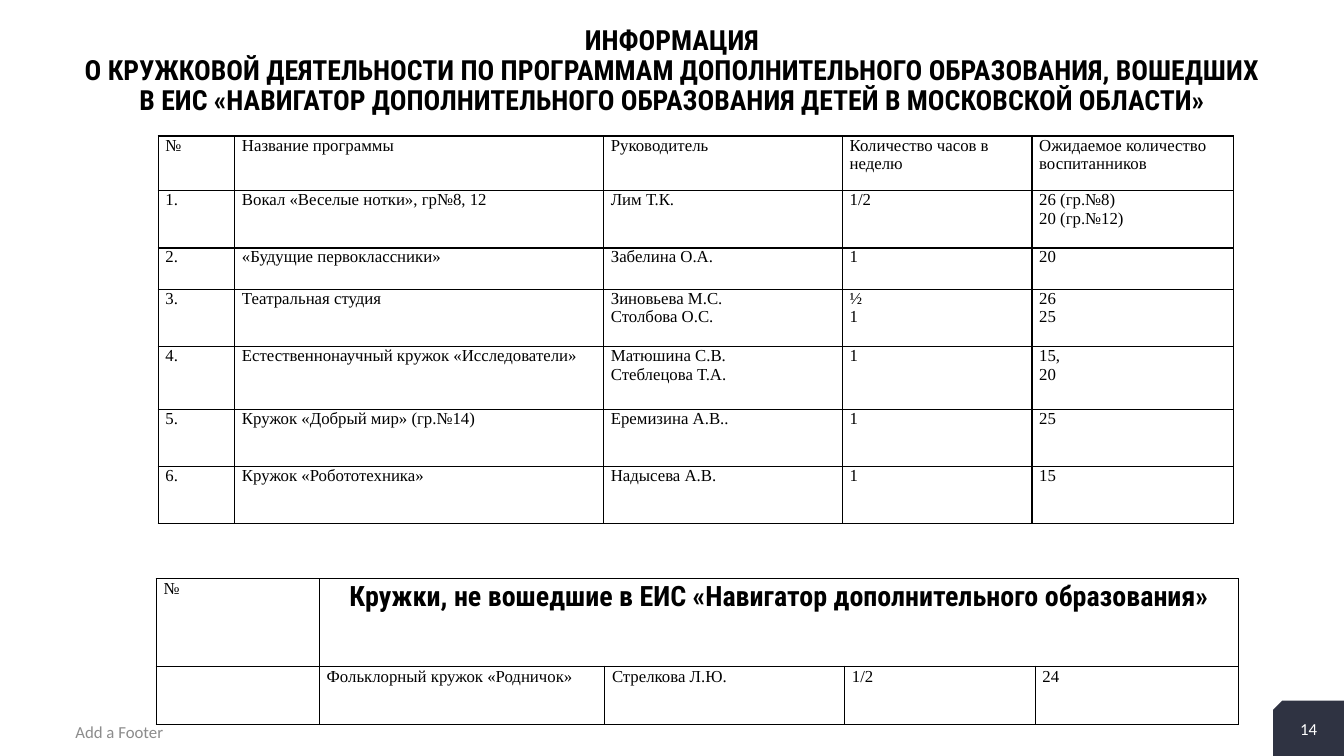
from dataclasses import dataclass

from lxml.etree import SubElement
from pptx import Presentation
from pptx.dml.color import RGBColor
from pptx.enum.shapes import MSO_SHAPE as Shape
from pptx.enum.text import MSO_ANCHOR as Anchor, PP_ALIGN as Align
from pptx.oxml.ns import qn
from pptx.util import Pt


@dataclass(frozen=True)
class Style:
    font: str
    size: float
    color: str
    bold: bool = False
    align: Align = Align.LEFT
    spacing: float = 1.0


@dataclass(frozen=True)
class Theme:
    title: Style = Style("Roboto Condensed", 19.8, "000000", True, Align.CENTER, 0.9)
    cell: Style = Style("Times New Roman", 12, "000000")
    loose_cell: Style = Style("Times New Roman", 12, "000000", spacing=1.07)
    heading: Style = Style("Roboto Condensed", 20, "000000", True, Align.CENTER, 1.07)
    footer: Style = Style("Calibri", 12, "8C8C8C")
    number: Style = Style("Calibri", 12, "FFFFFF", align=Align.CENTER)
    corner: str = "2F3342"
    border: str = "000000"
    border_width: float = 1


THEME = Theme()

TITLE = [
    "ИНФОРМАЦИЯ",
    "О КРУЖКОВОЙ ДЕЯТЕЛЬНОСТИ ПО ПРОГРАММАМ ДОПОЛНИТЕЛЬНОГО ОБРАЗОВАНИЯ, ВОШЕДШИХ "
    "В ЕИС «НАВИГАТОР ДОПОЛНИТЕЛЬНОГО ОБРАЗОВАНИЯ ДЕТЕЙ В МОСКОВСКОЙ ОБЛАСТИ»",
]

# Each line of a cell is its own paragraph
PROGRAMS = [
    ["№", "Название программы", "Руководитель", "Количество часов в неделю",
     "Ожидаемое количество воспитанников"],
    ["1.", "Вокал «Веселые нотки», гр№8, 12", "Лим Т.К.", "1/2", "26 (гр.№8)\n20 (гр.№12)"],
    ["2.", "«Будущие первоклассники»", "Забелина О.А.", "1", "20"],
    ["3.", "Театральная студия", "Зиновьева М.С.\nСтолбова О.С.", "½\n1", "26\n25"],
    ["4.", "Естественнонаучный кружок «Исследователи»", "Матюшина С.В.\nСтеблецова Т.А.",
     "1", "15,\n20"],
    ["5.", "Кружок «Добрый мир» (гр.№14)", "Еремизина А.В..", "1", "25"],
    ["6.", "Кружок «Робототехника»", "Надысева А.В.", "1", "15"],
]
OTHER_CLUBS = [
    ["№", "", "", "", ""],
    ["", "Фольклорный кружок «Родничок»", "Стрелкова Л.Ю.", "1/2", "24"],
]
OTHER_HEADING = "Кружки, не вошедшие в ЕИС «Навигатор дополнительного образования»"


def write(text_frame, lines, style):
    """Write each line as a paragraph."""
    for index, line in enumerate(lines):
        paragraph = text_frame.add_paragraph() if index else text_frame.paragraphs[0]
        paragraph.alignment = style.align
        paragraph.line_spacing = style.spacing
        run = paragraph.add_run()
        run.text = line
        run.font.name = style.font
        run.font.size = Pt(style.size)
        run.font.bold = style.bold
        run.font.color.rgb = RGBColor.from_string(style.color)


def add_text(slide, left, top, width, height, lines, style, anchor=Anchor.MIDDLE):
    shape = slide.shapes.add_textbox(Pt(left), Pt(top), Pt(width), Pt(height))
    text_frame = shape.text_frame
    text_frame.word_wrap = True
    text_frame.vertical_anchor = anchor
    text_frame.margin_top = text_frame.margin_bottom = 0
    write(text_frame, lines, style)


def add_corner(slide, left, top, width, height):
    shape = slide.shapes.add_shape(
        Shape.SNIP_1_RECTANGLE, Pt(left), Pt(top), Pt(width), Pt(height))
    shape.shadow.inherit = False
    shape.fill.solid()
    shape.fill.fore_color.rgb = RGBColor.from_string(THEME.corner)
    shape.line.fill.background()
    shape._element.spPr.get_or_add_xfrm().set("flipH", "1")


def format_cell(cell):
    """Clear the fill, set the margins and draw all four borders."""
    cell.margin_left = cell.margin_right = Pt(5.2)
    cell.margin_top = cell.margin_bottom = 0
    properties = cell._tc.get_or_add_tcPr()
    for side in ("a:lnL", "a:lnR", "a:lnT", "a:lnB"):
        line = SubElement(properties, qn(side), w=str(Pt(THEME.border_width)))
        fill = SubElement(line, qn("a:solidFill"))
        SubElement(fill, qn("a:srgbClr"), val=THEME.border)
    cell.fill.background()


def add_grid(slide, left, top, widths, heights, rows, style):
    frame = slide.shapes.add_table(
        len(heights), len(widths), Pt(left), Pt(top), Pt(sum(widths)), Pt(sum(heights)))
    table = frame.table
    table.first_row = table.horz_banding = False
    for column, width in zip(table.columns, widths):
        column.width = Pt(width)
    for row, height, texts in zip(table.rows, heights, rows):
        row.height = Pt(height)
        for cell, text in zip(row.cells, texts):
            format_cell(cell)
            if text:
                write(cell.text_frame, text.split("\n"), style)
    return table


def main():
    presentation = Presentation()
    presentation.slide_width, presentation.slide_height = Pt(960), Pt(540)
    slide = presentation.slides.add_slide(presentation.slide_layouts[6])

    # Page corner, footer and number
    add_corner(slide, 909.4, 500.4, 50.6, 39.6)
    add_text(slide, 46.8, 508.3, 324, 28.8, ["Add a Footer"], THEME.footer)
    add_text(slide, 909.4, 504.7, 50.6, 32.4, ["14"], THEME.number)

    # Title
    add_text(slide, 46.8, 18.7, 866.2, 72, TITLE, THEME.title, Anchor.TOP)

    # Programmes in the system
    add_grid(slide, 113, 97.2, [54.7, 263.5, 170.6, 135.4, 144],
             [39, 41, 29.5, 41, 44.6, 41, 41], PROGRAMS, THEME.cell)

    # Clubs outside the system, under one merged heading
    clubs = add_grid(slide, 111.6, 413.3, [116.6, 203.8, 171.4, 136.1, 145.4],
                     [62.6, 41.8], OTHER_CLUBS, THEME.loose_cell)
    heading = clubs.cell(0, 1)
    heading.merge(clubs.cell(0, 4))
    write(heading.text_frame, [OTHER_HEADING], THEME.heading)

    presentation.save("out.pptx")


if __name__ == "__main__":
    main()
